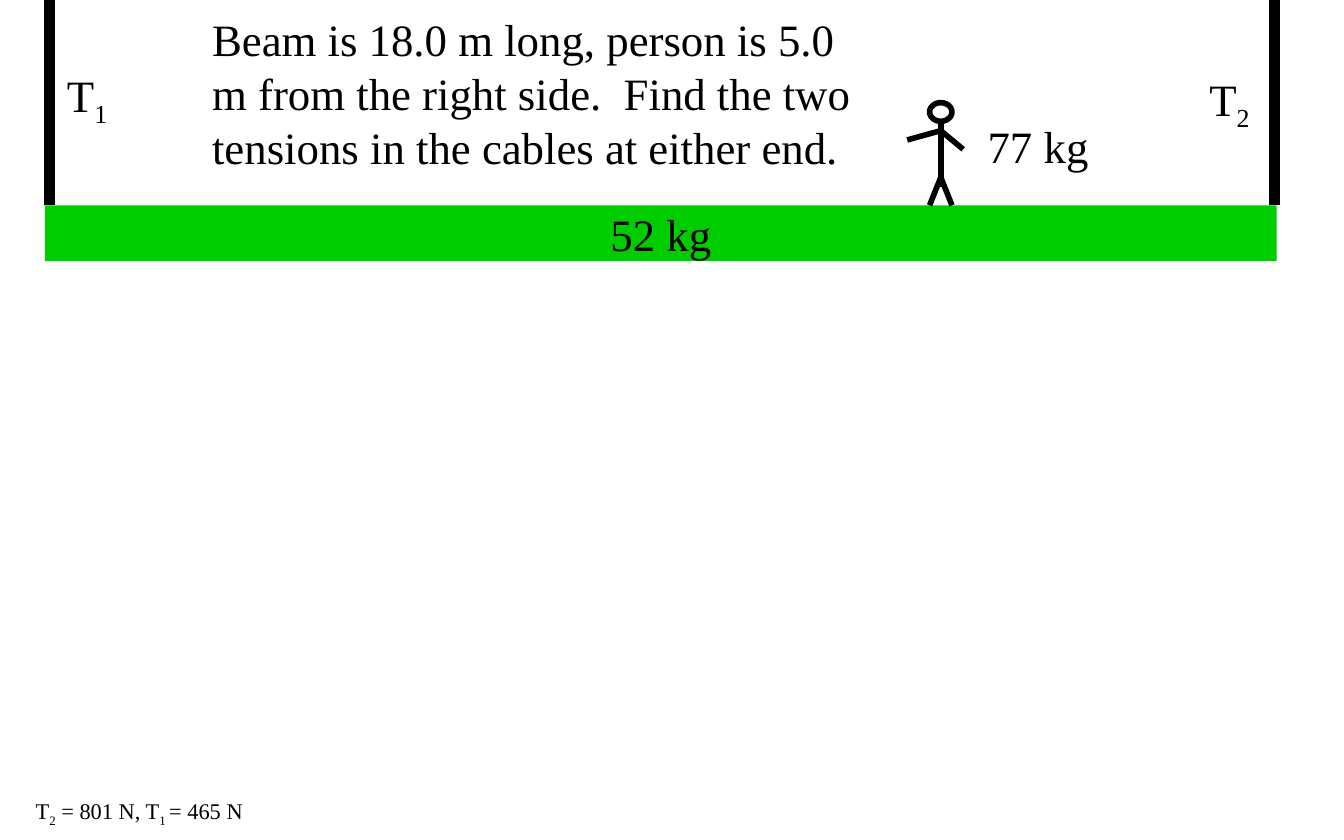
"""Build a beam-and-cables tension problem on a grid of 120 columns by 90 rows."""
from pptx import Presentation
from pptx import util as u
from pptx.dml.color import RGBColor
from pptx.enum import shapes, text
from pptx.oxml.ns import qn
from lxml import etree

BLACK = RGBColor(0, 0, 0)
GREEN = RGBColor(0, 0xCC, 0)
WHITE = RGBColor(0xFF, 0xFF, 0xFF)

deck = Presentation()
deck.slide_width, deck.slide_height = u.Inches(10), u.Inches(6.25)
col, row = deck.slide_width / 120, deck.slide_height / 90
slide = deck.slides.add_slide(deck.slide_layouts[6])
items = slide.shapes


def place(left, top, right, low):
    """Turn four grid values into lengths."""
    return [u.Emu(round(n * size)) for n, size in zip((left, top, right, low), (col, row, col, row))]


def write(shape, parts, size, form):
    """Fill a shape with text; every second part is a subscript."""
    frame = shape.text_frame
    for key, val in form.items():
        setattr(frame, key, val)
    for i, part in enumerate(parts):
        run = frame.paragraphs[0].add_run()
        run.text = part
        look = {"name": "Times New Roman", "size": u.Pt(size)}
        for key, val in look.items():
            setattr(run.font, key, val)
        run.font.color.rgb = BLACK
        if i % 2:
            run.font._element.set("baseline", "-25000")


beam = items.add_shape(shapes.MSO_SHAPE.RECTANGLE, *place(4, 22, 110, 6))
beam.shadow.inherit = False
beam.fill.solid()
beam.fill.fore_color.rgb = GREEN
beam.line.fill.background()
write(beam, ["52 kg"], 24, {"word_wrap": False, "vertical_anchor": text.MSO_ANCHOR.MIDDLE})
beam.text_frame.paragraphs[0].alignment = text.PP_ALIGN.CENTER

limbs = [
    (83, 22, 84, 19), (84, 19, 85, 22), (84, 20, 84, 14),
    (84, 14, 81, 15), (84, 14, 86, 16), (84, 14, 84, 13),
]
cables = [(x, 22, x, 0) for x in (4.44, 113.8)]
for ends, width in [(limb, 3) for limb in limbs] + [(cable, 6) for cable in cables]:
    line = items.add_connector(shapes.MSO_CONNECTOR.STRAIGHT, *place(*ends))
    line.line.color.rgb = BLACK
    line.line.width = u.Pt(width)
    etree.SubElement(line._element.spPr, qn("a:effectLst"))

head = items.add_shape(shapes.MSO_SHAPE.OVAL, *place(83, 11, 2, 2))
head.shadow.inherit = False
head.fill.solid()
head.fill.fore_color.rgb = WHITE
head.line.color.rgb = BLACK
head.line.width = u.Pt(3)

notes = [
    ((2, 84.7, 21.8, 4.3), ["T", "2", " = 801 N, T", "1 ", "= 465 N"], 12, False),
    ((87, 12, 11.5, 7.2), ["77 kg"], 24, False),
    ((4.8, 6.5, 6.2, 7.2), ["T", "1"], 24, False),
    ((106.8, 7, 6.2, 7.2), ["T", "2"], 24, False),
    ((17.76, 0.6, 61.2, 18.9), [
        "Beam is 18.0 m long, person is 5.0 m from the right side.  "
        "Find the two tensions in the cables at either end."], 24, True),
]
for spot, parts, size, wrap in notes:
    box = items.add_textbox(*place(*spot))
    write(box, parts, size, {"word_wrap": wrap, "auto_size": text.MSO_AUTO_SIZE.SHAPE_TO_FIT_TEXT})

deck.save("out.pptx")
